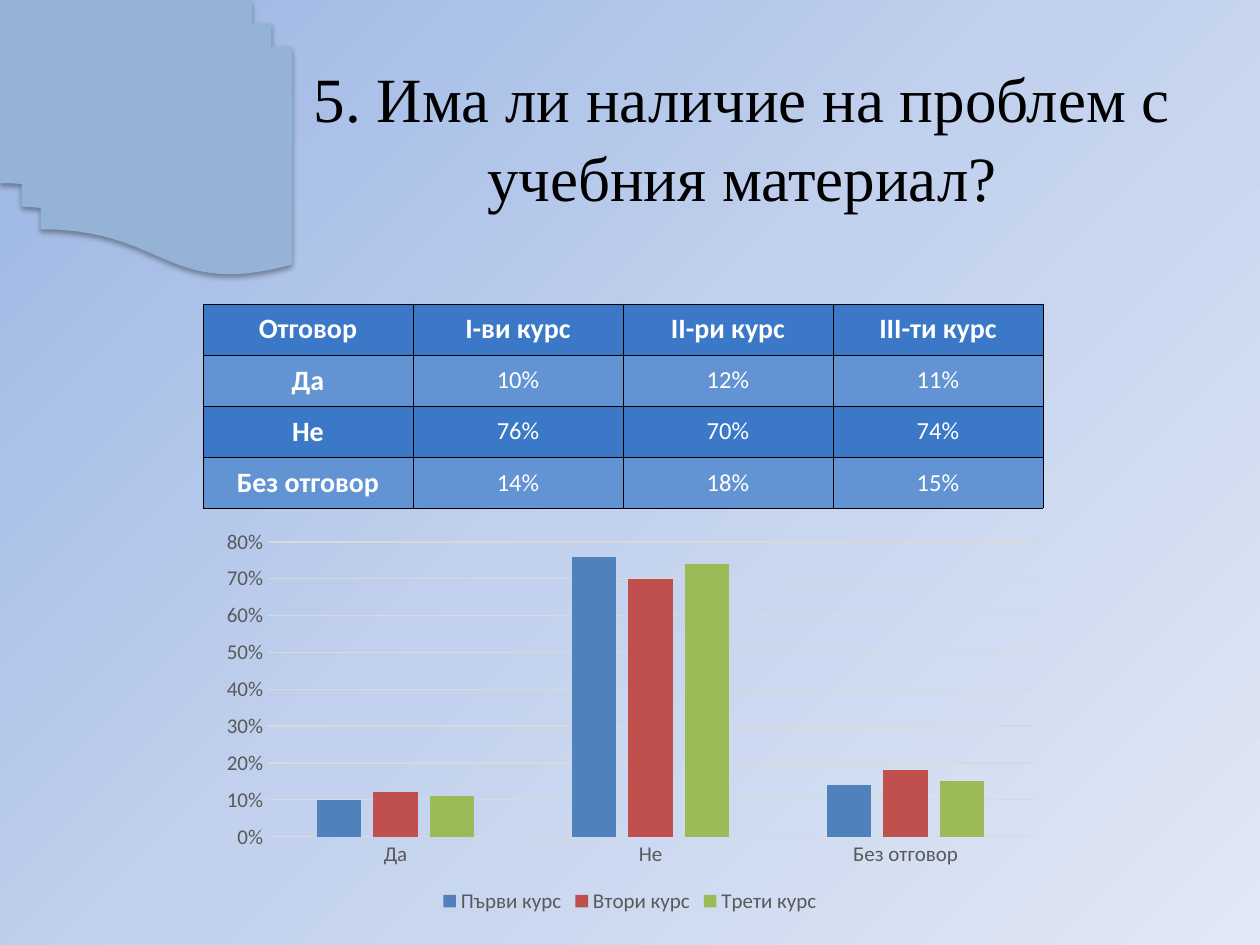
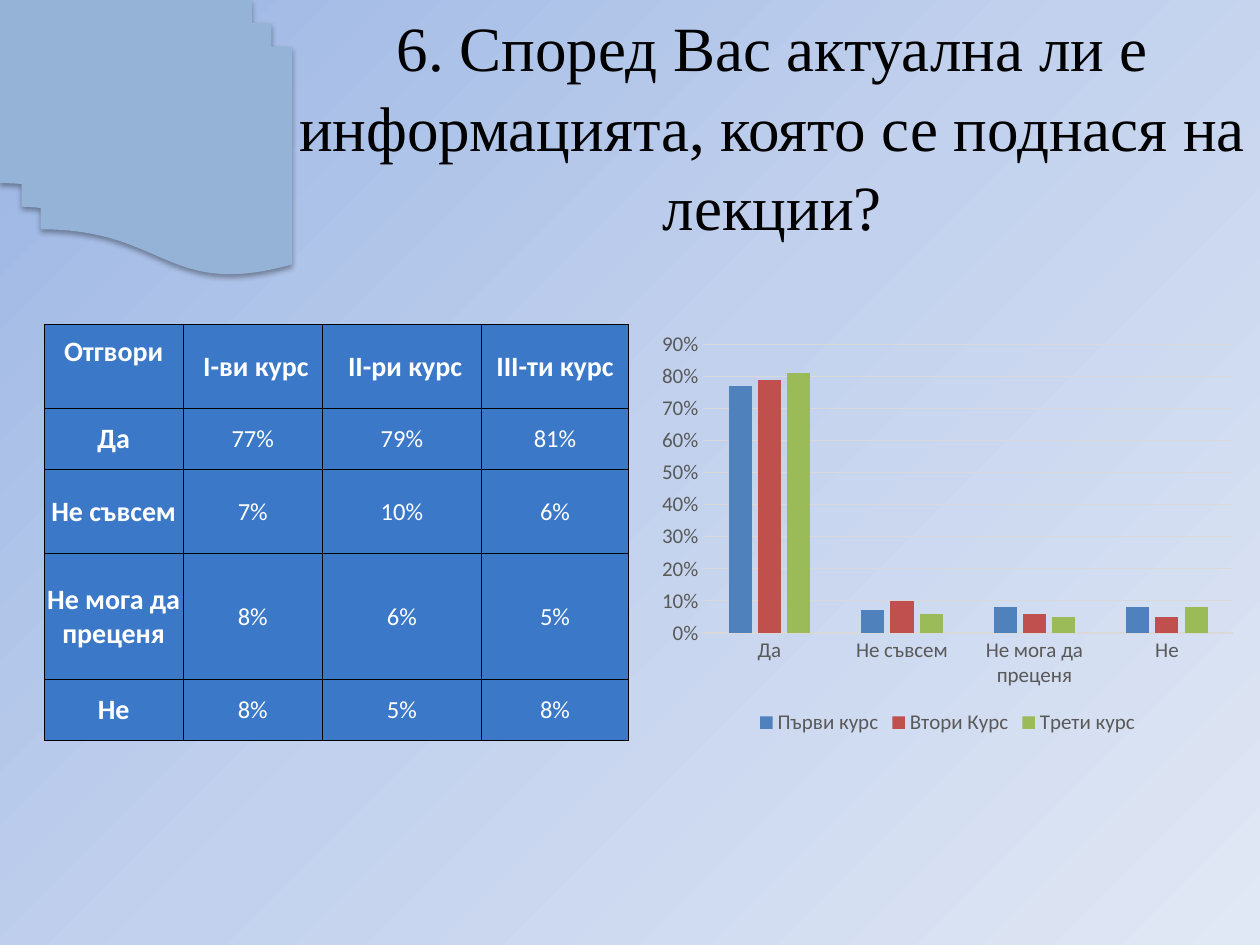
import copy

import pptx
import pptx.chart.data
import pptx.dml.color
import pptx.enum.chart
import pptx.enum.shapes
import pptx.enum.text
import pptx.oxml
import pptx.oxml.ns
import pptx.util

Pt = pptx.util.Pt
TITLE_FONT, BODY_FONT = "Times New Roman", "Calibri"
BLACK, WHITE = "000000", "FFFFFF"
BACKDROP = [(0, "9AB5E4"), (0.5, "C2D1ED"), (1, "E1E8F5")]
ORNAMENT = "95B3D7"
ROW_FILL, BAND_FILL = "3B79C8", "6294D3"
CHART_TEXT, CHART_LINE = "595959", "D9D9D9"
COURSE_COLOURS = ["4F81BD", "C0504D", "9BBB59"]


def rgb(value):
    return pptx.dml.color.RGBColor.from_string(value)


def xml(markup):
    """Parse markup whose root opening tag holds NS in place of the namespace."""
    return pptx.oxml.parse_xml(markup.replace("NS", pptx.oxml.ns.nsdecls("a"), 1))


def style_font(font, name, size, colour, bold=False):
    font.name, font.size, font.bold = name, Pt(size), bold
    font.color.rgb = rgb(colour)


def write_centred(frame, text, *style):
    paragraph = frame.paragraphs[0]
    paragraph.alignment = pptx.enum.text.PP_ALIGN.CENTER
    run = paragraph.add_run()
    run.text = text
    style_font(run.font, *style)
    return paragraph


def set_backdrop(master):
    """Give every slide the diagonal three-stop gradient."""
    fill = master.background.fill
    fill.gradient()
    fill.gradient_angle = 315
    first = fill.gradient_stops[0]._gs
    first.addnext(copy.deepcopy(first))
    for stop, (position, colour) in zip(fill.gradient_stops, BACKDROP):
        stop.position = position
        stop.color.rgb = rgb(colour)


def add_ornament(slide):
    pages = slide.shapes.add_shape(
        pptx.enum.shapes.MSO_SHAPE.FLOWCHART_MULTIDOCUMENT, 0, 0, Pt(167), Pt(157))
    pages.fill.solid()
    pages.fill.fore_color.rgb = rgb(ORNAMENT)
    pages.line.fill.background()
    pages.shadow.inherit = False
    properties = pages.element.spPr
    properties.xfrm.set("flipH", "1")
    properties.find(pptx.oxml.ns.qn("a:effectLst")).append(xml(
        f'<a:outerShdw NS blurRad="{Pt(3.1)}" dist="{Pt(1.8)}" dir="5400000" rotWithShape="0">'
        f'<a:srgbClr val="{BLACK}"><a:alpha val="35000"/></a:srgbClr></a:outerShdw>'))


def add_title(slide, text, left, top, width):
    frame = slide.shapes.add_textbox(Pt(left), Pt(top), Pt(width), Pt(90)).text_frame
    frame.word_wrap = True
    frame.vertical_anchor = pptx.enum.text.MSO_ANCHOR.MIDDLE
    write_centred(frame, text, TITLE_FONT, 36, BLACK).line_spacing = 1.05


def add_borders(cell):
    properties = cell._tc.get_or_add_tcPr()
    for side in "LRTB":
        properties.append(xml(
            f'<a:ln{side} NS w="{Pt(0.25)}"><a:solidFill><a:srgbClr val="{BLACK}"/>'
            f'</a:solidFill></a:ln{side}>'))


def add_answer_table(slide, left, top, widths, heights, rows, banded=False, inset=None):
    table = slide.shapes.add_table(len(rows), len(widths), Pt(left), Pt(top),
                                   Pt(sum(widths)), Pt(sum(heights))).table
    for column, width in zip(table.columns, widths):
        column.width = Pt(width)
    for r, (answers, height) in enumerate(zip(rows, heights)):
        table.rows[r].height = Pt(height)
        for c, text in enumerate(answers):
            cell = table.cell(r, c)
            cell.vertical_anchor = pptx.enum.text.MSO_ANCHOR.MIDDLE
            if inset is not None:
                cell.margin_left = cell.margin_right = cell.margin_top = Pt(inset)
                cell.margin_bottom = 0
            add_borders(cell)
            cell.fill.solid()
            cell.fill.fore_color.rgb = rgb(BAND_FILL if banded and r % 2 else ROW_FILL)
            heading = r == 0 or c == 0
            write_centred(cell.text_frame, text, BODY_FONT, 16 if heading else 14,
                          WHITE, heading)
    return table


def add_answer_chart(slide, left, top, width, height, answers, courses):
    data = pptx.chart.data.CategoryChartData(number_format="0%")
    data.categories = answers
    for course, percents in courses.items():
        data.add_series(course, [percent / 100 for percent in percents])
    chart = slide.shapes.add_chart(pptx.enum.chart.XL_CHART_TYPE.COLUMN_CLUSTERED, Pt(left),
                                   Pt(top), Pt(width), Pt(height), data).chart
    style_font(chart.font, BODY_FONT, 12, CHART_TEXT)
    chart.has_title = False
    chart.has_legend = True
    chart.legend.position = pptx.enum.chart.XL_LEGEND_POSITION.BOTTOM
    chart.legend.include_in_layout = False
    style_font(chart.legend.font, BODY_FONT, 12, CHART_TEXT)

    for axis in (chart.category_axis, chart.value_axis):
        axis.major_tick_mark = axis.minor_tick_mark = pptx.enum.chart.XL_TICK_MARK.NONE
        style_font(axis.tick_labels.font, BODY_FONT, 12, CHART_TEXT)
    chart.value_axis.tick_labels.number_format = "0%"
    chart.value_axis.tick_labels.number_format_is_linked = False
    chart.value_axis.format.line.fill.background()
    for line in (chart.category_axis.format.line, chart.value_axis.major_gridlines.format.line):
        line.width = Pt(0.75)
        line.color.rgb = rgb(CHART_LINE)

    plot = chart.plots[0]
    plot.gap_width, plot.overlap = 219, -27
    plot.vary_by_categories = False
    for course, colour in zip(plot.series, COURSE_COLOURS):
        course.format.fill.solid()
        course.format.fill.fore_color.rgb = rgb(colour)


def answer_rows(header, answers, courses):
    """Turn the figures of each course into table rows, one per answer."""
    return [header] + [[answer, *(f"{percent}%" for percent in percents)]
                       for answer, *percents in zip(answers, *courses.values())]


def add_question_slide(deck, title, *place):
    slide = deck.slides.add_slide(deck.slide_layouts[6])
    add_ornament(slide)
    add_title(slide, title, *place)
    return slide


def main():
    deck = pptx.Presentation()
    deck.slide_width, deck.slide_height = Pt(720), Pt(540)
    set_backdrop(deck.slide_master)

    slide = add_question_slide(deck, "5. Има ли наличие на проблем с учебния материал?",
                               150.5, 32, 547)
    answers = ["Да", "Не", "Без отговор"]
    courses = {"Първи курс": [10, 76, 14],
               "Втори курс": [12, 70, 18],
               "Трети курс": [11, 74, 15]}
    header = ["Отговор", "I-ви курс", "II-ри курс", "III-ти курс"]
    add_answer_table(slide, 116, 173.6, [120] * 4, [29.2] * 4,
                     answer_rows(header, answers, courses), banded=True)
    add_answer_chart(slide, 120, 298, 480, 227, answers, courses)

    slide = add_question_slide(
        deck, "6. Според Вас актуална ли е информацията, която се поднася на лекции?",
        99.4, 26, 684)
    answers = ["Да", "Не съвсем", "Не мога да преценя", "Не"]
    courses = {"Първи курс": [77, 7, 8, 8],
               "Втори Курс": [79, 10, 6, 5],
               "Трети курс": [81, 6, 5, 8]}
    header = ["Отгвори", " I-ви курс", " II-ри курс", "III-ти курс"]
    table = add_answer_table(slide, 25.2, 185, [79.5, 79.5, 91, 84], [48.2, 34.8, 48.2, 72, 34.8],
                             answer_rows(header, answers, courses), inset=0.7)
    table.cell(0, 0).margin_bottom = Pt(17)
    add_answer_chart(slide, 371.5, 185, 340, 238, answers, courses)

    deck.save("out.pptx")


if __name__ == "__main__":
    main()
